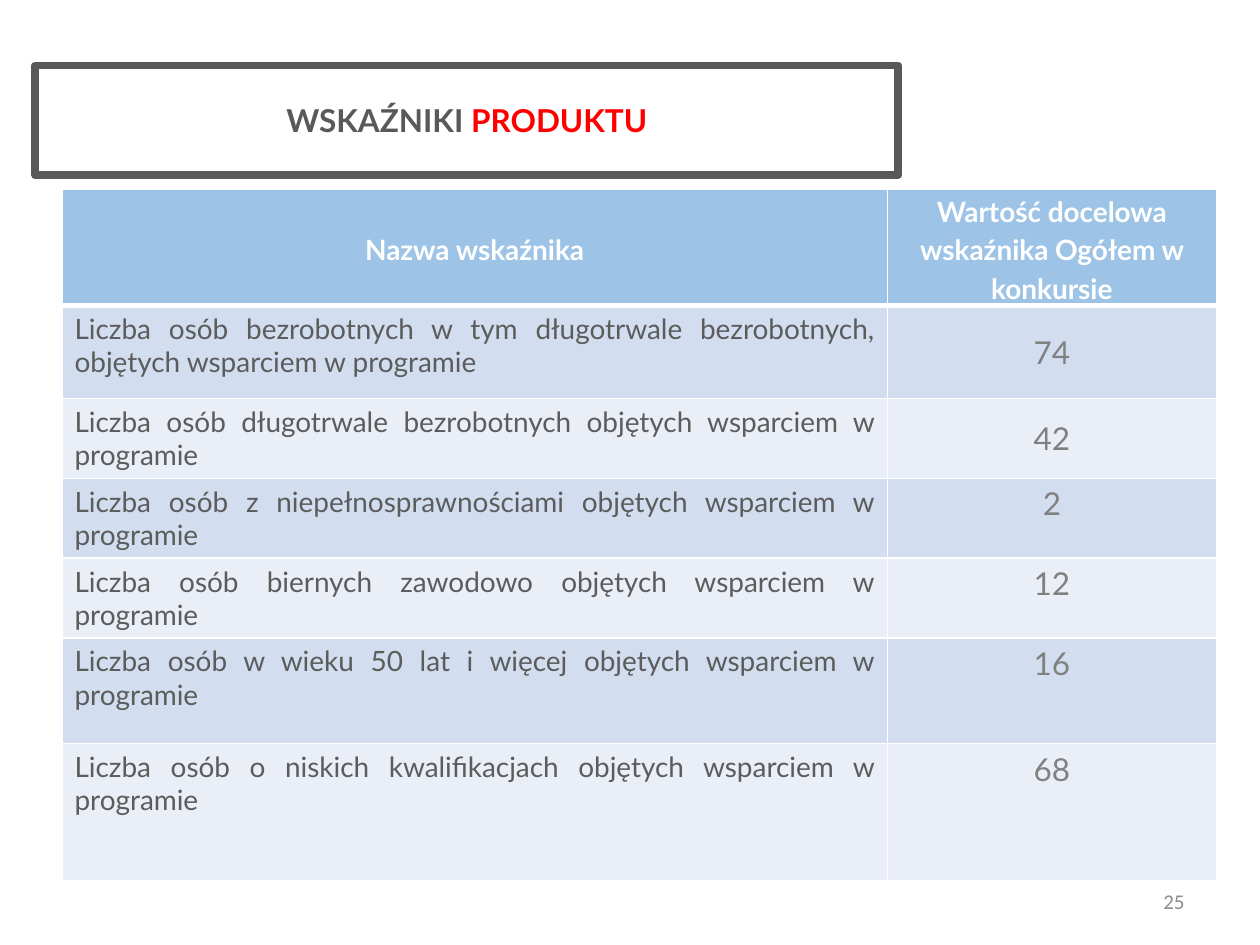
import pptx
import pptx.dml.color
import pptx.enum.text
import pptx.oxml
import pptx.oxml.ns
import pptx.util

Cm = pptx.util.Cm
Align = pptx.enum.text.PP_ALIGN
Anchor = pptx.enum.text.MSO_ANCHOR

HEADERS = ["Nazwa wskaźnika", "Wartość docelowa wskaźnika Ogółem w konkursie"]
INDICATORS = [
    ("Liczba osób bezrobotnych w tym długotrwale bezrobotnych, objętych wsparciem w programie", "74", 1.88),
    ("Liczba osób długotrwale bezrobotnych objętych wsparciem w programie", "42", 1.6),
    ("Liczba osób z niepełnosprawnościami objętych wsparciem w programie", "2", 1.6),
    ("Liczba osób biernych zawodowo objętych wsparciem w programie", "12", 1.6),
    ("Liczba osób w wieku 50 lat i więcej objętych wsparciem w programie", "16", 2.13),
    ("Liczba osób o niskich kwalifikacjach objętych wsparciem w programie", "68", 2.77),
]
CENTRED_VALUE_ROWS = 2
COLUMN_WIDTHS = [16.64, 6.63]
HEADER_HEIGHT = 2.29


def color(value):
    return pptx.dml.color.RGBColor.from_string(value)


def add_text(paragraph, text, size=16, font="Lato", fill="5C5C5C", bold=False,
             align=Align.CENTER, line_spacing=None):
    paragraph.alignment = align
    paragraph.line_spacing = line_spacing
    run = paragraph.add_run()
    run.text = text
    run.font.size = pptx.util.Pt(size)
    run.font.name = font
    run.font.bold = bold
    run.font.color.rgb = color(fill)


def add_title(slide):
    title = slide.shapes.title
    title.left, title.top, title.width, title.height = Cm(0.71), Cm(1.32), Cm(17.4), Cm(2.21)
    title.line.color.rgb = color("595959")
    title.line.width = pptx.util.Pt(4.5)
    frame = title.text_frame
    frame.auto_size = pptx.enum.text.MSO_AUTO_SIZE.NONE
    frame.vertical_anchor = Anchor.MIDDLE
    for text, fill in (("WSKAŹNIKI ", "595959"), ("PRODUKTU", "FF0000")):
        add_text(frame.paragraphs[0], text, size=18, fill=fill, bold=True)


def set_borders(cell, bottom_width):
    properties = cell._tc.get_or_add_tcPr()
    widths = {"lnL": 1, "lnR": 1, "lnT": 1, "lnB": bottom_width}
    for index, (side, width) in enumerate(widths.items()):
        border = pptx.oxml.parse_xml(
            f'<a:{side} {pptx.oxml.ns.nsdecls("a")} w="{pptx.util.Pt(width)}">'
            f'<a:solidFill><a:srgbClr val="FFFFFF"/></a:solidFill></a:{side}>')
        properties.insert(index, border)


def fill_cell(cell, text, background, anchor=Anchor.TOP, bottom_width=1, **text_format):
    cell.fill.solid()
    cell.fill.fore_color.rgb = color(background)
    cell.vertical_anchor = anchor
    set_borders(cell, bottom_width)
    add_text(cell.text_frame.paragraphs[0], text, **text_format)


def add_indicator_table(slide):
    heights = [HEADER_HEIGHT] + [height for _, _, height in INDICATORS]
    table = slide.shapes.add_table(
        len(heights), len(COLUMN_WIDTHS), Cm(1.25), Cm(3.82),
        Cm(sum(COLUMN_WIDTHS)), Cm(sum(heights))).table
    for column, width in zip(table.columns, COLUMN_WIDTHS):
        column.width = Cm(width)
    for row, height in zip(table.rows, heights):
        row.height = Cm(height)

    for cell, text in zip(table.rows[0].cells, HEADERS):
        cell.margin_left = cell.margin_right = Cm(0.18)
        cell.margin_top = cell.margin_bottom = 0
        fill_cell(cell, text, "9DC3E6", anchor=Anchor.MIDDLE, bottom_width=3,
                  fill="FFFFFF", bold=True, line_spacing=1.15)

    for number, (name, value, _) in enumerate(INDICATORS, start=1):
        background = "D2DEEF" if number % 2 else "EAEFF7"
        anchor = Anchor.MIDDLE if number <= CENTRED_VALUE_ROWS else Anchor.TOP
        fill_cell(table.cell(number, 0), name, background, align=Align.JUSTIFY)
        fill_cell(table.cell(number, 1), value, background, anchor=anchor,
                  size=18, fill="808080")


def add_page_number(slide):
    frame = slide.shapes.add_textbox(Cm(18.21), Cm(17.65), Cm(5.92), Cm(1.02)).text_frame
    frame.word_wrap = True
    frame.vertical_anchor = Anchor.MIDDLE
    add_text(frame.paragraphs[0], "25", size=12, font="Calibri", fill="8C8C8C", align=Align.RIGHT)


def main():
    presentation = pptx.Presentation()
    presentation.slide_width, presentation.slide_height = Cm(25.4), Cm(19.05)
    slide = presentation.slides.add_slide(presentation.slide_layouts.get_by_name("Title Only"))
    add_page_number(slide)
    add_title(slide)
    add_indicator_table(slide)
    presentation.save("out.pptx")


if __name__ == "__main__":
    main()
